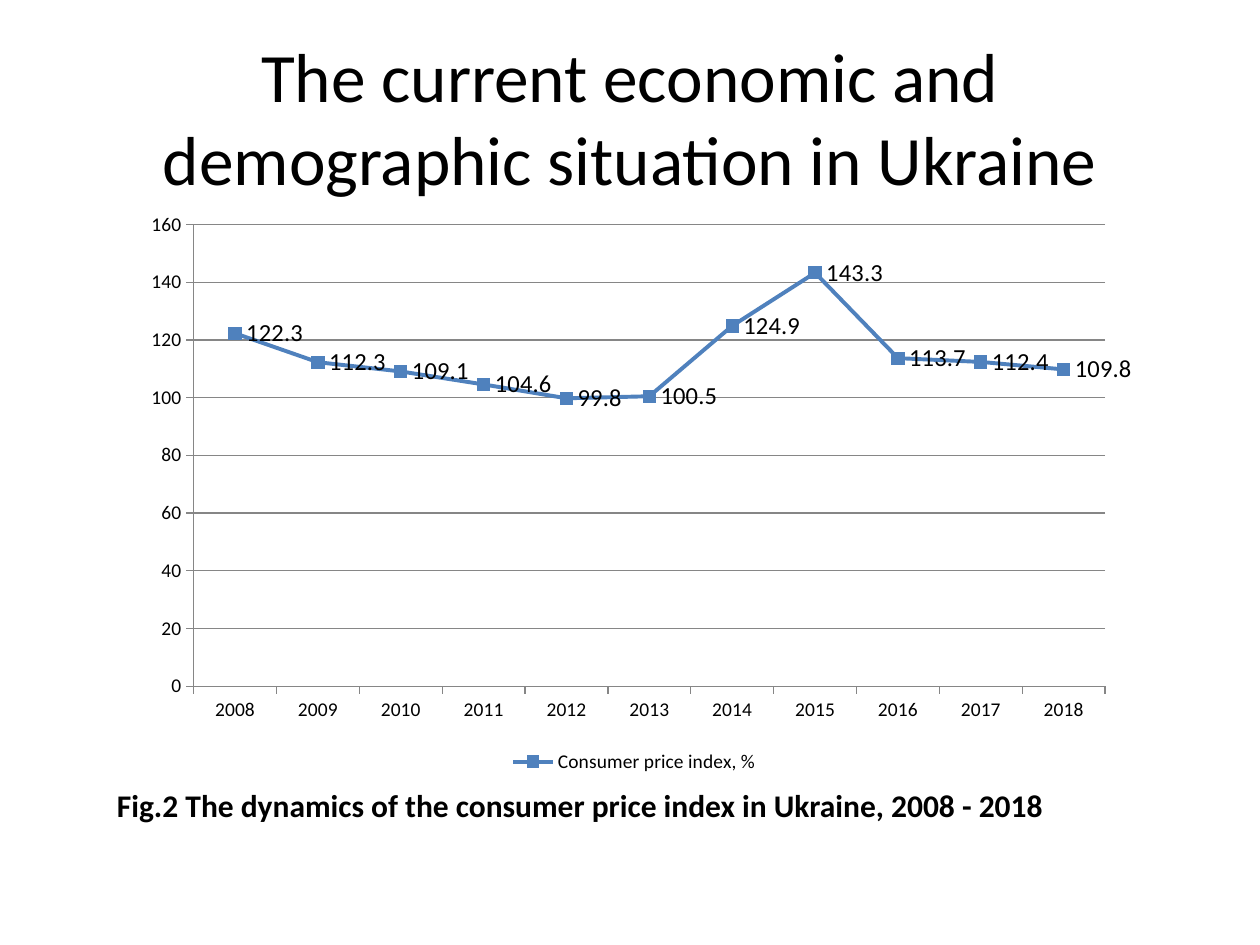
from lxml import etree
from pptx import Presentation
from pptx.chart.data import CategoryChartData
from pptx.dml.color import RGBColor
from pptx.enum import chart as ch, text as tx
from pptx.oxml import ns
from pptx.util import Inches, Pt

FONT = "Calibri"
BLACK = RGBColor(0x00, 0x00, 0x00)
BLUE = RGBColor(0x4F, 0x81, 0xBD)
GREY = RGBColor(0x86, 0x86, 0x86)

YEARS = [str(year) for year in range(2008, 2019)]
PRICE_INDEX = [122.3, 112.3, 109.1, 104.6, 99.8, 100.5,
               124.9, 143.3, 113.7, 112.4, 109.8]


def format_font(font, size, bold=False):
    font.name = FONT
    font.size = Pt(size)
    font.bold = bold
    font.color.rgb = BLACK


def write_text(frame, words, size, bold=False, align=tx.PP_ALIGN.LEFT,
               anchor=tx.MSO_ANCHOR.TOP, fit=tx.MSO_AUTO_SIZE.NONE):
    frame.word_wrap = True
    frame.auto_size = fit
    frame.vertical_anchor = anchor
    paragraph = frame.paragraphs[0]
    paragraph.alignment = align
    run = paragraph.add_run()
    run.text = words
    format_font(run.font, size, bold)


def place(shape, left, top, width, height):
    shape.left, shape.top = Inches(left), Inches(top)
    shape.width, shape.height = Inches(width), Inches(height)


def format_axis(axis, gridlines):
    axis.major_tick_mark = ch.XL_TICK_MARK.OUTSIDE
    axis.minor_tick_mark = ch.XL_TICK_MARK.NONE
    axis.format.line.color.rgb = GREY
    axis.format.line.width = Pt(0.75)
    axis.has_major_gridlines = gridlines
    if gridlines:
        axis.major_gridlines.format.line.color.rgb = GREY
        axis.major_gridlines.format.line.width = Pt(0.75)


def set_plot_layout(chart, **fractions):
    """Fix the inner plot area as fractions of the chart."""
    plot_area = chart.plots[0]._element.getparent()
    for old in plot_area.findall(ns.qn("c:layout")):
        plot_area.remove(old)
    layout = etree.Element(ns.qn("c:layout"))
    plot_area.insert(0, layout)
    manual = etree.SubElement(layout, ns.qn("c:manualLayout"))
    settings = {"layoutTarget": "inner", "xMode": "edge", "yMode": "edge"}
    for tag, value in {**settings, **fractions}.items():
        etree.SubElement(manual, ns.qn(f"c:{tag}"), val=str(value))


def add_index_chart(slide):
    data = CategoryChartData(number_format="General")
    data.categories = YEARS
    data.add_series("Consumer price index, %", PRICE_INDEX)
    chart = slide.shapes.add_chart(
        ch.XL_CHART_TYPE.LINE_MARKERS, Inches(1.06), Inches(1.6),
        Inches(7.95), Inches(4.58), data).chart
    format_font(chart.font, 11.1)
    chart.has_title = False
    chart.has_legend = True
    chart.legend.position = ch.XL_LEGEND_POSITION.BOTTOM
    chart.legend.include_in_layout = False

    # Axes
    format_axis(chart.category_axis, gridlines=False)
    format_axis(chart.value_axis, gridlines=True)
    chart.value_axis.minimum_scale = 0
    chart.value_axis.maximum_scale = 160
    chart.value_axis.major_unit = 20
    set_plot_layout(chart, x=0.06, y=0.04, w=0.91, h=0.8)

    # Index line with its markers and values
    plot = chart.plots[0]
    plot.vary_by_categories = False
    index = plot.series[0]
    index.smooth = False
    index.format.line.color.rgb = BLUE
    index.format.line.width = Pt(2.25)
    index.marker.style = ch.XL_MARKER_STYLE.SQUARE
    index.marker.size = 7
    index.marker.format.fill.solid()
    index.marker.format.fill.fore_color.rgb = BLUE
    index.marker.format.line.color.rgb = BLUE
    labels = index.data_labels
    labels.show_value = True
    labels.position = ch.XL_LABEL_POSITION.RIGHT
    format_font(labels.font, 14)


def main():
    deck = Presentation()
    deck.slide_width, deck.slide_height = Inches(10), Inches(7.5)
    slide = deck.slides.add_slide(deck.slide_layouts[5])

    # Title
    title = slide.shapes.title
    place(title, 0.5, 0.3, 9, 1.25)
    write_text(title.text_frame,
               "The current economic and demographic situation in Ukraine",
               39.6, align=tx.PP_ALIGN.CENTER, anchor=tx.MSO_ANCHOR.MIDDLE)

    add_index_chart(slide)

    # Figure caption
    caption = slide.shapes.add_textbox(Inches(0.83), Inches(6.19),
                                       Inches(8.43), Inches(0.4))
    write_text(caption.text_frame,
               "Fig.2 The dynamics of the consumer price index in Ukraine, "
               "2008 - 2018", 18, bold=True,
               fit=tx.MSO_AUTO_SIZE.SHAPE_TO_FIT_TEXT)

    deck.save("out.pptx")


if __name__ == "__main__":
    main()
